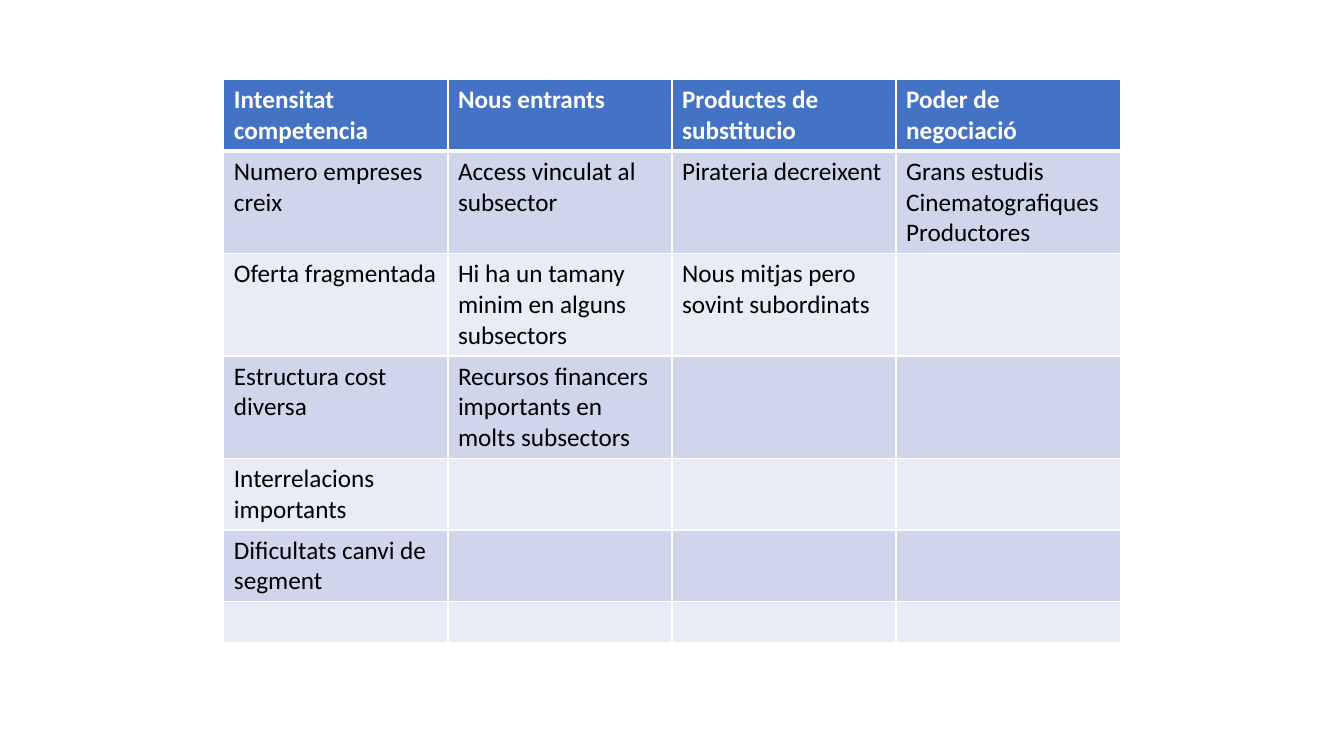
import pptx
import pptx.util
import pptx.dml.color
import pptx.oxml
import pptx.oxml.ns

HEADERS = ["Intensitat competencia", "Nous entrants",
           "Productes de substitucio", "Poder de negociació"]
ROWS = [
    ["Numero empreses creix", "Access vinculat al subsector",
     "Pirateria decreixent", "Grans estudis\nCinematografiques\nProductores"],
    ["Oferta fragmentada", "Hi ha un tamany minim en alguns subsectors",
     "Nous mitjas pero sovint subordinats", ""],
    ["Estructura cost diversa",
     "Recursos financers importants en molts subsectors", "", ""],
    ["Interrelacions importants", "", "", ""],
    ["Dificultats canvi de segment", "", "", ""],
    ["", "", "", ""],
]
COLORS = {"header": "4472C4", "odd": "CFD5EA", "even": "E9EBF5",
          "white": "FFFFFF", "black": "000000"}
FONT = "Calibri"
LEFT, TOP, TABLE_WIDTH, ROW_HEIGHT = 2.22, 0.79, 8.89, 0.41
THIN, THICK = 1, 3


def rgb(name):
    return pptx.dml.color.RGBColor.from_string(COLORS[name])


def set_borders(cell, row_index):
    widths = {
        "L": THIN,
        "R": THIN,
        "T": THICK if row_index == 1 else THIN,
        "B": THICK if row_index == 0 else THIN,
    }
    properties = cell._tc.get_or_add_tcPr()
    for side, width in widths.items():
        properties.append(pptx.oxml.parse_xml(
            f'<a:ln{side} {pptx.oxml.ns.nsdecls("a")} w="{pptx.util.Pt(width)}">'
            f'<a:solidFill><a:srgbClr val="{COLORS["white"]}"/></a:solidFill>'
            f'</a:ln{side}>'))


def fill_cell(cell, text, row_index):
    is_header = row_index == 0
    band = "header" if is_header else "odd" if row_index % 2 else "even"
    set_borders(cell, row_index)
    cell.fill.solid()
    cell.fill.fore_color.rgb = rgb(band)
    cell.text = text
    for paragraph in cell.text_frame.paragraphs:
        paragraph.font.name = FONT
        paragraph.font.size = pptx.util.Pt(18)
        paragraph.font.bold = is_header
        paragraph.font.color.rgb = rgb("white" if is_header else "black")


def main():
    presentation = pptx.Presentation()
    presentation.slide_width = pptx.util.Inches(13.33)
    presentation.slide_height = pptx.util.Inches(7.5)
    slide = presentation.slides.add_slide(presentation.slide_layouts[6])

    content = [HEADERS] + ROWS
    table = slide.shapes.add_table(
        len(content), len(HEADERS),
        pptx.util.Inches(LEFT), pptx.util.Inches(TOP),
        pptx.util.Inches(TABLE_WIDTH),
        pptx.util.Inches(ROW_HEIGHT * len(content))).table
    for row_index, texts in enumerate(content):
        for column_index, text in enumerate(texts):
            fill_cell(table.cell(row_index, column_index), text, row_index)

    presentation.save("out.pptx")


if __name__ == "__main__":
    main()
